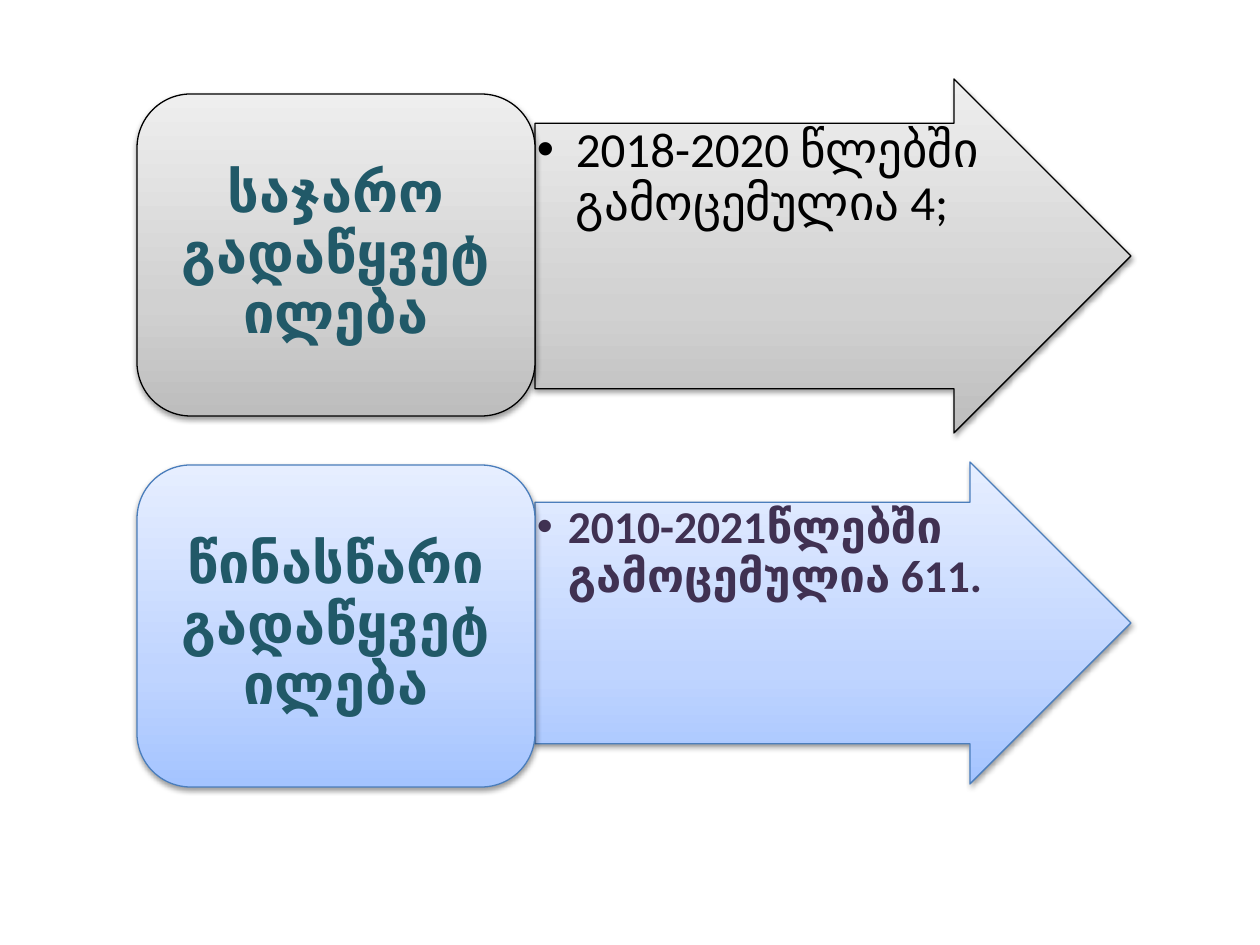
from lxml.etree import SubElement
from pptx import Presentation
from pptx.dml.color import RGBColor as Color
from pptx.enum.shapes import MSO_SHAPE as Shape
from pptx.enum.text import MSO_ANCHOR as Anchor, PP_ALIGN as Align
from pptx.oxml.ns import qn
from pptx.util import Pt

PX = 914400 // 126
BLACK = Color(0x00, 0x00, 0x00)
BLUE = Color(0x4B, 0x7E, 0xBC)
TEAL = Color(0x21, 0x59, 0x68)
PURPLE = Color(0x40, 0x31, 0x52)
GREYS = Color(0xBD, 0xBD, 0xBD), Color(0xD1, 0xD1, 0xD1), Color(0xEE, 0xEE, 0xEE)
BLUES = Color(0xA4, 0xC4, 0xFF), Color(0xBF, 0xD4, 0xFF), Color(0xE6, 0xEE, 0xFF)
STOPS = 0, 35, 100


def add_node(parent, tag, **attributes):
    return SubElement(parent, qn(tag), attributes)


class SlideBuilder:
    """Draws gradient boxes and arrows with text on one slide."""

    font_name = "Calibri"

    def __init__(self, slide):
        self.slide = slide

    def panel(self, kind, place, colors, line_color):
        shape = self.slide.shapes.add_shape(kind, *(value * PX for value in place))
        shape.line.color.rgb = line_color
        shape.line.width = Pt(0.75)
        shape.fill.gradient()
        shape.fill.gradient_angle = 90
        properties = shape._element.spPr
        stops = properties.find(".//" + qn("a:gsLst"))
        stops.clear()
        for position, color in zip(STOPS, colors):
            stop = add_node(stops, "a:gs", pos=str(position * 1000))
            add_node(stop, "a:srgbClr", val=str(color))
        shape.shadow.inherit = False
        shadow = add_node(properties.find(qn("a:effectLst")), "a:outerShdw",
                          blurRad="40000", dist="20000", dir="5400000", rotWithShape="0")
        add_node(add_node(shadow, "a:srgbClr", val=str(BLACK)), "a:alpha", val="38000")
        return shape

    def label(self, shape, text, size, color, bold, align, anchor, insets, indent=0):
        frame = shape.text_frame
        frame.word_wrap = True
        frame.vertical_anchor = anchor
        frame.margin_left = frame.margin_right = insets[0] * PX
        frame.margin_top = frame.margin_bottom = insets[1] * PX
        paragraph = frame.paragraphs[0]
        paragraph.text = text
        paragraph.alignment = align
        paragraph.line_spacing = 0.9
        if indent:
            paragraph.level = 1
            properties = paragraph._p.get_or_add_pPr()
            properties.set("marL", str(indent * PX))
            properties.set("indent", str(-indent * PX))
            add_node(properties, "a:buFont", typeface="Arial")
            add_node(properties, "a:buChar", char="•")
        font = paragraph.font
        font.name, font.size, font.bold = self.font_name, Pt(size), bold
        font.color.rgb = color

    def arrow(self, place, colors, line_color, text, size, color, bold, indent):
        shape = self.panel(Shape.RIGHT_ARROW, place, colors, line_color)
        shape.adjustments[0], shape.adjustments[1] = 0.75, 0.5
        self.label(shape, text, size, color, bold, Align.LEFT, Anchor.TOP, (2, 2), indent)

    def box(self, place, colors, line_color, text):
        shape = self.panel(Shape.ROUNDED_RECTANGLE, place, colors, line_color)
        self.label(shape, text, 32, TEAL, True, Align.CENTER, Anchor.MIDDLE, (16, 8))


def main():
    presentation = Presentation()
    presentation.slide_width, presentation.slide_height = 1260 * PX, 945 * PX
    builder = SlideBuilder(presentation.slides.add_slide(presentation.slide_layouts[6]))
    builder.arrow((535, 79, 596, 354), GREYS, BLACK,
                  "2018-2020 წლებში გამოცემულია 4;", 28, BLACK, False, 39)
    builder.box((137, 94, 398, 322), GREYS, BLACK, "საჯარო გადაწყვეტილება")
    builder.arrow((535, 462, 596, 322), BLUES, BLUE,
                  "2010-2021წლებში გამოცემულია 611.", 26, PURPLE, True, 31)
    builder.box((137, 465, 398, 322), BLUES, BLUE, "წინასწარი გადაწყვეტილება")
    presentation.save("out.pptx")


if __name__ == "__main__":
    main()
